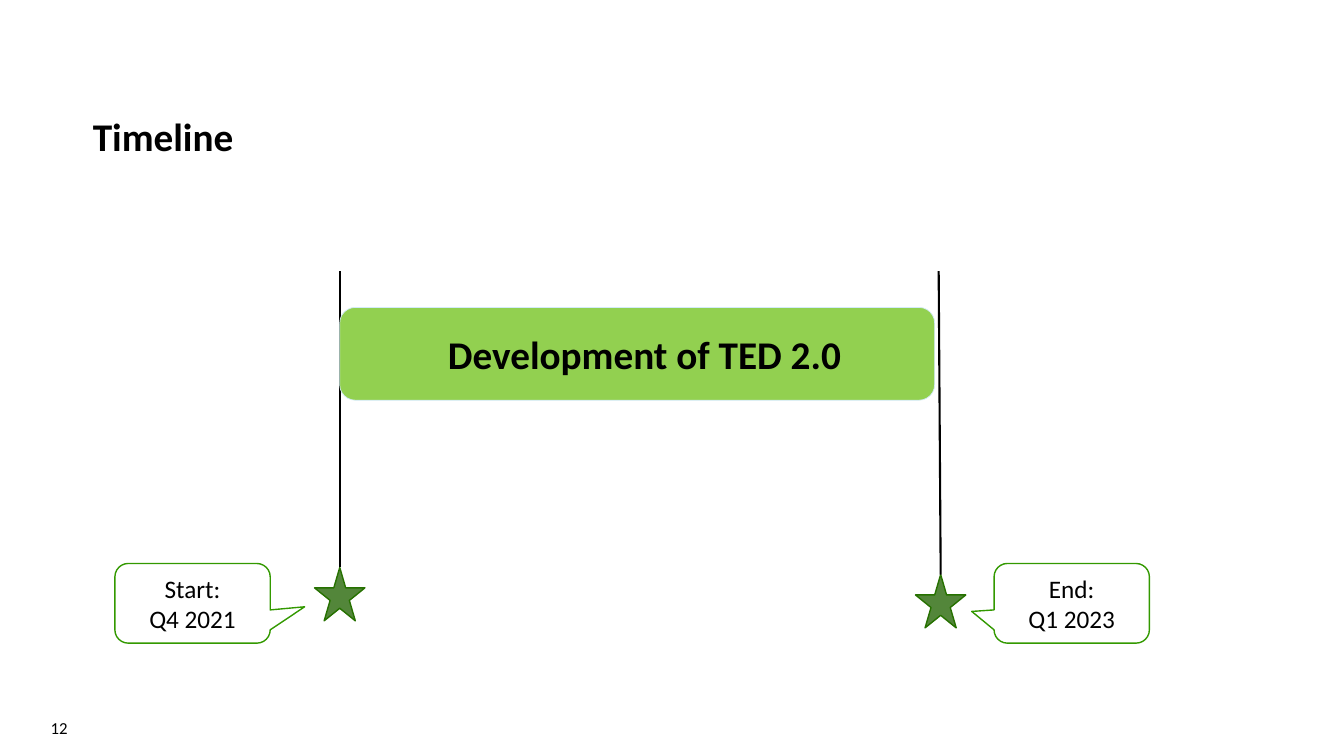
"""Builds the timeline slide for the development of TED 2.0."""
import pptx
import pptx.dml.color
import pptx.enum.shapes
import pptx.enum.text
import pptx.oxml.ns
import pptx.util
from lxml import etree

Inches, Pt = pptx.util.Inches, pptx.util.Pt
Kind = pptx.enum.shapes.MSO_SHAPE
Anchor, Align = pptx.enum.text.MSO_ANCHOR, pptx.enum.text.PP_ALIGN


def paint(part, fill, line, width):
    """Gives a shape a solid fill and outline, without a shadow."""
    part.shadow.inherit = False
    part.fill.solid()
    part.fill.fore_color.rgb = pptx.dml.color.RGBColor.from_string(fill)
    part.line.color.rgb = pptx.dml.color.RGBColor.from_string(line)
    part.line.width = Pt(width)


def write(part, lines, size, align, anchor=Anchor.MIDDLE, bold=False):
    """Writes one paragraph, with a line break between its lines."""
    frame = part.text_frame
    frame.word_wrap = True
    frame.vertical_anchor = anchor
    paragraph = frame.paragraphs[0]
    paragraph.alignment = align
    for index, line in enumerate(lines):
        if index:
            paragraph.add_line_break()
        run = paragraph.add_run()
        run.text = line
        run.font.name = "Calibri"
        run.font.size = Pt(size)
        run.font.bold = bold
        run.font.color.rgb = pptx.dml.color.RGBColor.from_string("000000")
    return frame


deck = pptx.Presentation()
deck.slide_width, deck.slide_height = Inches(13.33), Inches(7.5)
slide = deck.slides.add_slide(deck.slide_layouts[6])
shapes = slide.shapes

title = shapes.add_textbox(Inches(0.92), Inches(0.14), Inches(11.48), Inches(1.45))
title_frame = write(title, ["Timeline"], 28, Align.LEFT, Anchor.BOTTOM, True)
title_frame.margin_left = title_frame.margin_right = title_frame.margin_bottom = 0
title_frame.paragraphs[0].line_spacing = 0.9

line_top, star_width, star_height = 2.69, 0.5, 0.53
milestones = [
    (["Start:", "Q4 2021"], 1.14, (0.722, 0.044), 3.37, 3.37, 5.63),
    (["End:", "Q1 2023"], 9.86, (-0.644, 0.102), 9.31, 9.33, 5.7),
]
for label, label_left, pointer, top_x, star_x, star_top in milestones:
    callout = shapes.add_shape(Kind.ROUNDED_RECTANGULAR_CALLOUT, Inches(label_left),
                               Inches(5.59), Inches(1.54), Inches(0.79))
    callout.adjustments[0], callout.adjustments[1] = pointer
    paint(callout, "FFFFFF", "339900", 1)
    write(callout, label, 18, Align.CENTER)

    star = shapes.add_shape(Kind.STAR_5_POINT, Inches(star_x - star_width / 2),
                            Inches(star_top), Inches(star_width), Inches(star_height))
    paint(star, "53863A", "267100", 1)

    marker = shapes.add_connector(pptx.enum.shapes.MSO_CONNECTOR.STRAIGHT, Inches(top_x),
                                  Inches(line_top), Inches(star_x), Inches(star_top))
    marker.line.color.rgb = pptx.dml.color.RGBColor.from_string("000000")
    marker.line.width = Pt(1.5)
    etree.SubElement(marker._element.spPr, pptx.oxml.ns.qn("a:effectLst"))

phase = shapes.add_shape(Kind.ROUNDED_RECTANGLE, Inches(3.37), Inches(3.05),
                         Inches(5.9), Inches(0.92))
paint(phase, "92D050", "D3EBF9", 0.5)
phase_frame = write(phase, ["Development of TED 2.0"], 28, Align.CENTER, bold=True)
phase_frame.margin_left = Inches(0.24)

page_number = shapes.add_textbox(0, Inches(7.02), Inches(0.77), Inches(0.4))
write(page_number, ["12"], 12, Align.RIGHT)

deck.save("out.pptx")
